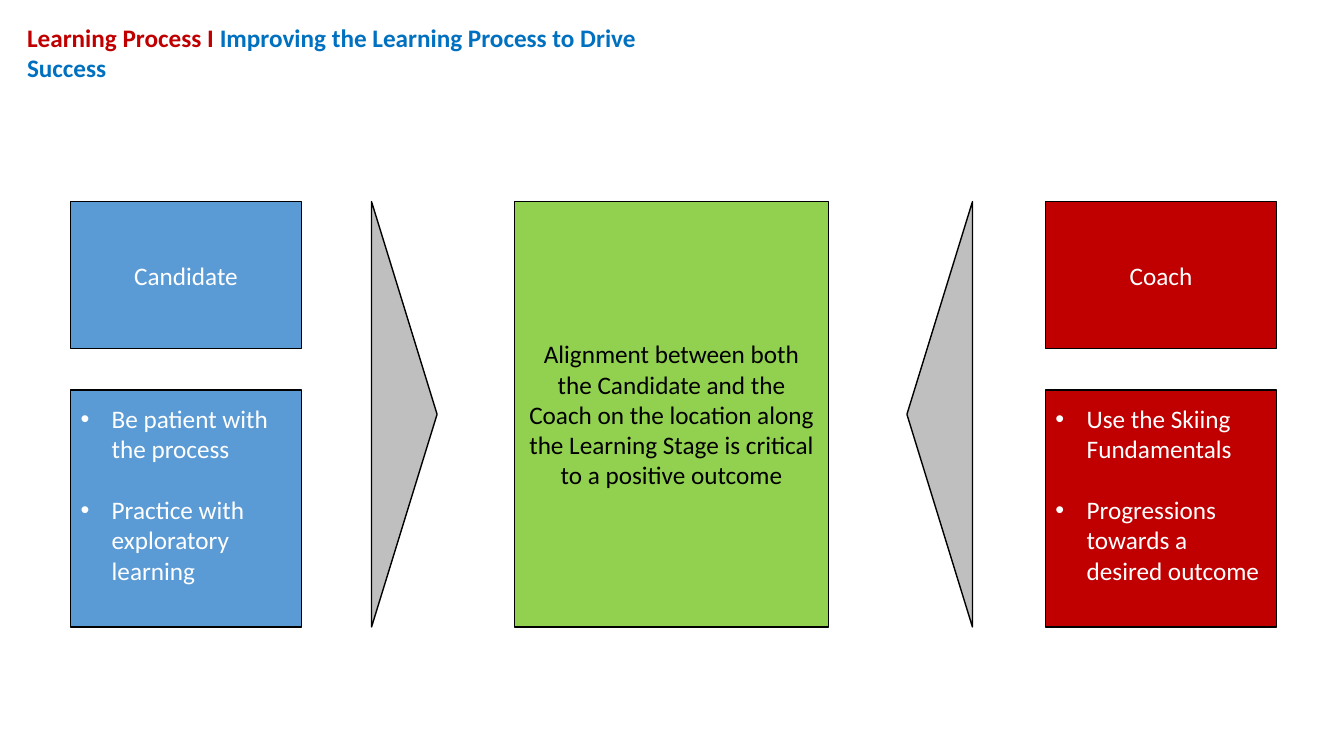
import pptx
import pptx.util
import pptx.dml.color
import pptx.enum.shapes
import pptx.enum.text
from lxml import etree

Inches, Pt = pptx.util.Inches, pptx.util.Pt
SHAPE = pptx.enum.shapes.MSO_SHAPE
ALIGN = pptx.enum.text.PP_ALIGN
ANCHOR = pptx.enum.text.MSO_ANCHOR

# Content
TITLE = [("Learning Process I ", "C00000"),
         ("Improving the Learning Process to Drive Success", "0070C0")]
GOAL = ("Alignment between both the Candidate and the Coach on the location "
        "along the Learning Stage is critical to a positive outcome")
# Role, fill, box left, wedge centre, wedge turn, points
ROLES = [
    ("Candidate", "5B9BD5", 0.7, 4.01, 90,
     ["Be patient with the process", "Practice with exploratory learning"]),
    ("Coach", "C00000", 10.37, 9.32, 270,
     ["Use the Skiing Fundamentals", "Progressions towards a desired outcome"]),
]

# Layout
TOP, TALL = 2, 4.22
WIDE, HEAD, BODY = 2.29, 1.46, 2.35
WEDGE = 0.65


def color(code):
    return pptx.dml.color.RGBColor.from_string(code)


def style(run, code, bold=False):
    run.font.name = "Calibri"
    run.font.size = Pt(18)
    run.font.bold = bold
    run.font.color.rgb = color(code)


def draw(kind, left, top, width, height, fill):
    shape = slide.shapes.add_shape(
        kind, Inches(left), Inches(top), Inches(width), Inches(height))
    shape.shadow.inherit = False
    shape.fill.solid()
    shape.fill.fore_color.rgb = color(fill)
    shape.line.color.rgb = color("000000")
    shape.line.width = Pt(1)
    return shape


def label(shape, text, code):
    frame = shape.text_frame
    frame.word_wrap = True
    frame.vertical_anchor = ANCHOR.MIDDLE
    frame.text = text
    para = frame.paragraphs[0]
    para.alignment = ALIGN.CENTER
    style(para.runs[0], code)


def bullets(shape, points):
    frame = shape.text_frame
    frame.word_wrap = True
    frame.vertical_anchor = ANCHOR.TOP
    frame.margin_top = Inches(0.13)
    frame.text = "\n".join(points)
    for para in frame.paragraphs:
        para.alignment = ALIGN.LEFT
        para.space_after = Pt(22)
        style(para.runs[0], "FFFFFF")
        props = para._p.get_or_add_pPr()
        props.set("marL", str(Inches(0.31)))
        props.set("indent", str(-Inches(0.31)))
        for tag, key, value in [("buFont", "typeface", "Arial"),
                                ("buChar", "char", "•")]:
            etree.SubElement(props, pptx.oxml.ns.qn("a:" + tag)).set(key, value)


deck = pptx.Presentation()
deck.slide_width, deck.slide_height = Inches(13.33), Inches(7.5)
slide = deck.slides.add_slide(deck.slide_layouts[6])

# Title
box = slide.shapes.add_textbox(Inches(0.17), Inches(0.17), Inches(7), Inches(0.4))
box.text_frame.word_wrap = True
for text, code in TITLE:
    run = box.text_frame.paragraphs[0].add_run()
    run.text = text
    style(run, code, True)

# Roles, each with a wedge that points at the goal
for role, fill, left, mid, turn, points in ROLES:
    label(draw(SHAPE.RECTANGLE, left, TOP, WIDE, HEAD, fill), role, "FFFFFF")
    body = draw(SHAPE.RECTANGLE, left, TOP + TALL - BODY, WIDE, BODY, fill)
    bullets(body, points)
    wedge = draw(SHAPE.ISOSCELES_TRIANGLE, mid - TALL / 2,
                 TOP + (TALL - WEDGE) / 2, TALL, WEDGE, "BFBFBF")
    wedge.rotation = turn

# Goal
label(draw(SHAPE.RECTANGLE, 5.1, TOP, 3.12, TALL, "92D050"), GOAL, "000000")

deck.save("out.pptx")
